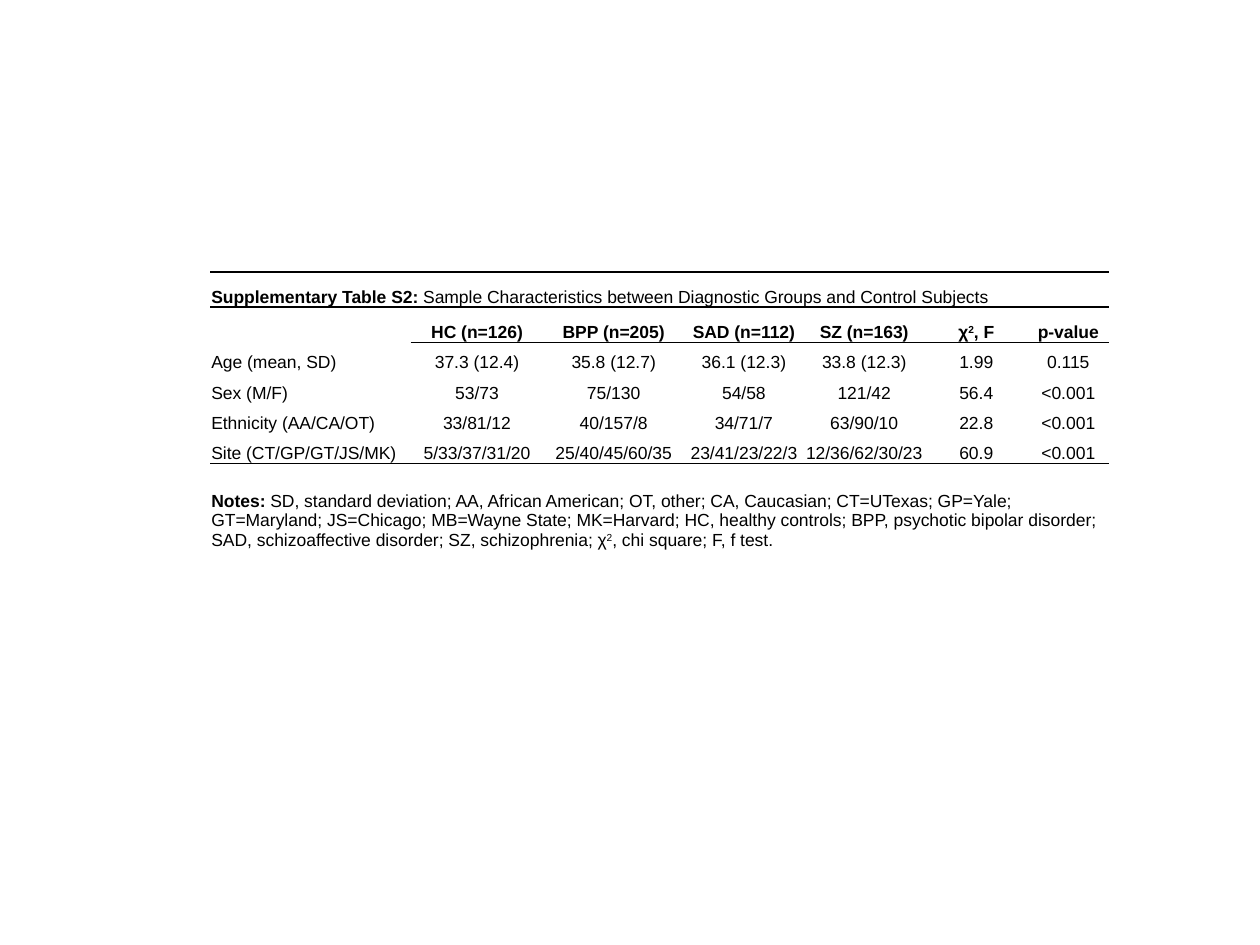
from lxml import etree
from pptx import Presentation
from pptx.dml.color import RGBColor
from pptx.enum import text
from pptx.oxml.ns import qn
from pptx.util import Cm, Pt

BLACK = RGBColor(0, 0, 0)
LEFT, CENTER = text.PP_ALIGN.LEFT, text.PP_ALIGN.CENTER
COLUMN_WIDTHS = [4.04, 2.67, 2.84, 2.41, 2.44, 2.08, 1.63]
ROW_HEIGHTS = [0.71, 0.71, 0.61, 0.61, 0.61, 0.61, 1.75]
RULE_START = {0: 0, 1: 0, 2: 1, 6: 0}

TITLE = [("Supplementary Table S2: ", "bold"),
         ("Sample Characteristics between Diagnostic Groups and Control Subjects", "")]
HEADINGS = ["", "HC (n=126)", "BPP (n=205)", "SAD (n=112)", "SZ (n=163)", "χ²", "p-value"]
MEASURES = [
    ["Age (mean, SD)", "37.3 (12.4)", "35.8 (12.7)", "36.1 (12.3)", "33.8 (12.3)", "1.99", "0.115"],
    ["Sex (M/F)", "53/73", "75/130", "54/58", "121/42", "56.4", "<0.001"],
    ["Ethnicity (AA/CA/OT)", "33/81/12", "40/157/8", "34/71/7", "63/90/10", "22.8", "<0.001"],
    ["Site (CT/GP/GT/JS/MK)", "5/33/37/31/20", "25/40/45/60/35", "23/41/23/22/3",
     "12/36/62/30/23", "60.9", "<0.001"],
]
NOTES = [
    ("Notes:", "bold"),
    (" SD, standard deviation; AA, African American; OT, other; CA, Caucasian; CT=UTexas; "
     "GP=Yale; GT=Maryland; JS=Chicago; MB=Wayne State; MK=Harvard; HC, healthy controls; "
     "BPP, psychotic bipolar disorder; SAD, schizoaffective disorder; SZ, schizophrenia; χ", ""),
    ("2", "super"),
    (", chi square; F, f test.", ""),
]


def write(cell, spans, alignment):
    para = cell.text_frame.paragraphs[0]
    para.alignment = alignment
    para.font.size = Pt(10)
    for wording, style in spans:
        span = para.add_run()
        span.text = wording
        span.font.name = "Arial"
        span.font.size = Pt(10)
        span.font.bold = "bold" in style
        span.font.color.rgb = BLACK
        if "super" in style:
            span.font._element.set("baseline", "30000")


def add_border(cell, side, ruled):
    line = etree.SubElement(cell._tc.get_or_add_tcPr(), qn(f"a:ln{side}"), w=str(Pt(1)))
    fill = etree.SubElement(line, qn("a:solidFill" if ruled else "a:noFill"))
    if ruled:
        etree.SubElement(fill, qn("a:srgbClr"), val=str(BLACK))


deck = Presentation()
deck.slide_width, deck.slide_height = Cm(25.4), Cm(19.05)
page = deck.slides.add_slide(deck.slide_layouts[6])
frame = page.shapes.add_table(len(ROW_HEIGHTS), len(COLUMN_WIDTHS), Cm(4.24), Cm(5.48),
                              Cm(sum(COLUMN_WIDTHS)), Cm(sum(ROW_HEIGHTS)))
table = frame.table
table.first_row = table.horz_banding = False
for column, width in zip(table.columns, COLUMN_WIDTHS):
    column.width = Cm(width)
for row, height in zip(table.rows, ROW_HEIGHTS):
    row.height = Cm(height)

for r in range(len(ROW_HEIGHTS)):
    for c in range(len(COLUMN_WIDTHS)):
        cell = table.cell(r, c)
        cell.margin_left = cell.margin_right = cell.margin_top = Cm(0.02)
        cell.margin_bottom = 0
        cell.vertical_anchor = text.MSO_ANCHOR.BOTTOM
        for side, edge in [("L", None), ("R", None), ("T", r), ("B", r + 1)]:
            add_border(cell, side, c >= RULE_START.get(edge, len(COLUMN_WIDTHS)))
        cell.fill.background()

for r, spans in [(0, TITLE), (len(ROW_HEIGHTS) - 1, NOTES)]:
    table.cell(r, 0).merge(table.cell(r, len(COLUMN_WIDTHS) - 1))
    write(table.cell(r, 0), spans, LEFT)

for r, values in enumerate([HEADINGS] + MEASURES, start=1):
    style = "bold" if r == 1 else ""
    for c, value in enumerate(values):
        spans = [(value, style)] if value else []
        if value == "χ²":
            spans = [("χ", style), ("2", "bold super"), (", F", style)]
        write(table.cell(r, c), spans, CENTER if c else LEFT)

deck.save("out.pptx")
